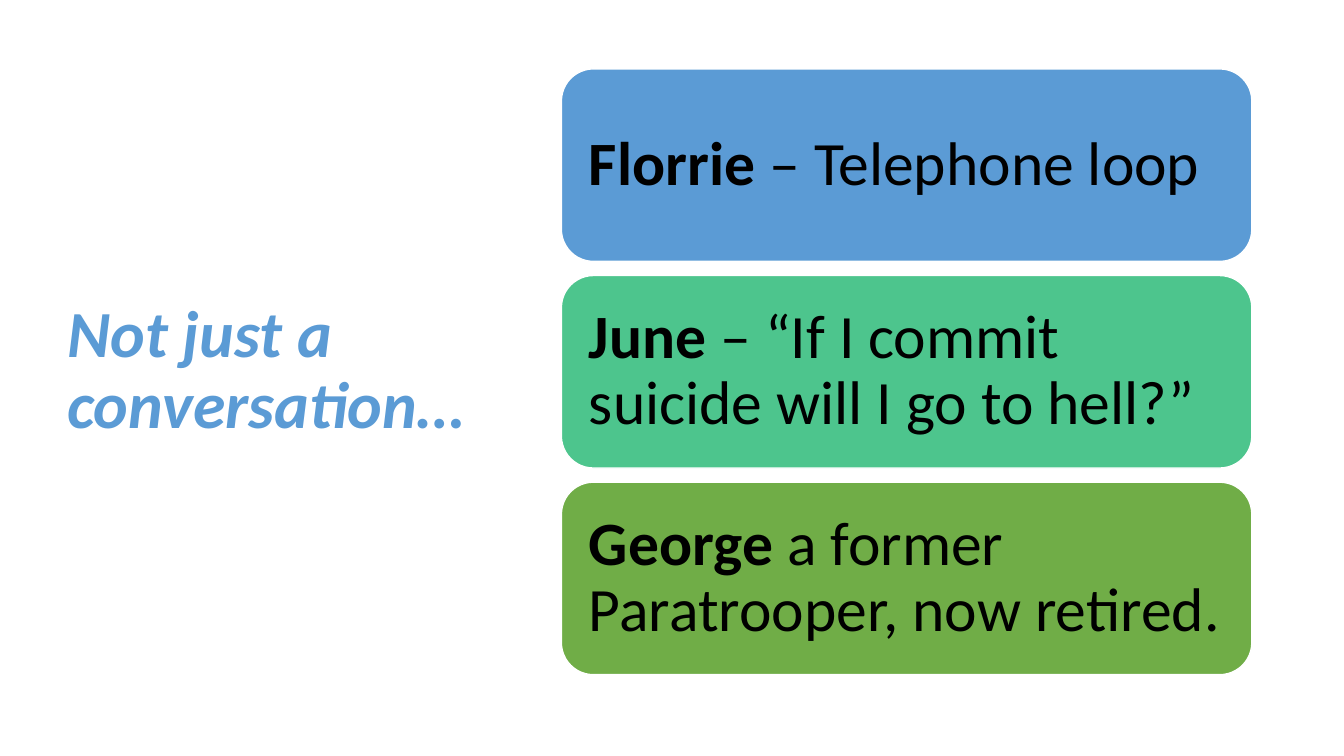
from pptx import Presentation
from pptx.dml.color import RGBColor
from pptx.enum.shapes import MSO_SHAPE
from pptx.enum.text import MSO_ANCHOR, MSO_AUTO_SIZE, PP_ALIGN
from pptx.util import Pt


def paint(code):
    return RGBColor.from_string(code)


class Deck:
    """Holds the style and the current slide."""

    face = "Calibri"
    blue, green, olive = "5B9BD5", "4DC58D", "70AD47"
    black, white = "000000", "FFFFFF"

    def __init__(self):
        self.file = Presentation()
        self.file.slide_width, self.file.slide_height = Pt(960), Pt(540)
        self.slide = self.file.slides.add_slide(self.file.slide_layouts[5])

    def style(self, frame, size, color):
        frame.word_wrap = True
        frame.auto_size = MSO_AUTO_SIZE.NONE
        frame.vertical_anchor = MSO_ANCHOR.MIDDLE
        para = frame.paragraphs[0]
        para.alignment = PP_ALIGN.LEFT
        para.line_spacing = 0.9
        font = para.font
        font.name, font.size = self.face, Pt(size)
        font.color.rgb = paint(color)
        return para

    def title(self, text, left, top, width, height):
        box = self.slide.shapes.title
        box.left, box.top = Pt(left), Pt(top)
        box.width, box.height = Pt(width), Pt(height)
        box.text_frame.text = text
        para = self.style(box.text_frame, 47, self.blue)
        para.font.bold = para.font.italic = True

    def card(self, name, text, fill, left, top, width, height):
        box = self.slide.shapes.add_shape(
            MSO_SHAPE.ROUNDED_RECTANGLE, Pt(left), Pt(top), Pt(width), Pt(height))
        box.shadow.inherit = False
        box.fill.solid()
        box.fill.fore_color.rgb = paint(fill)
        box.line.color.rgb = paint(self.white)
        box.line.width = Pt(1)
        frame = box.text_frame
        frame.margin_left = frame.margin_right = Pt(13)
        frame.margin_top = frame.margin_bottom = Pt(13)
        para = self.style(frame, 44, self.black)
        for part, bold in ((name, True), (text, False)):
            run = para.add_run()
            run.text = part
            run.font.bold = bold


def main():
    deck = Deck()
    deck.title("Not just a conversation…", 41, 49, 299.5, 433.4)
    people = (
        ("Florrie", " – Telephone loop", deck.blue),
        ("June", " – “If I commit suicide will I go to hell?”", deck.green),
        ("George", " a former Paratrooper, now retired.", deck.olive),
    )
    for row, (name, text, fill) in enumerate(people):
        deck.card(name, text, fill, 401, 49.2 + row * 147.6, 493.2, 137.5)
    deck.file.save("out.pptx")


if __name__ == "__main__":
    main()
